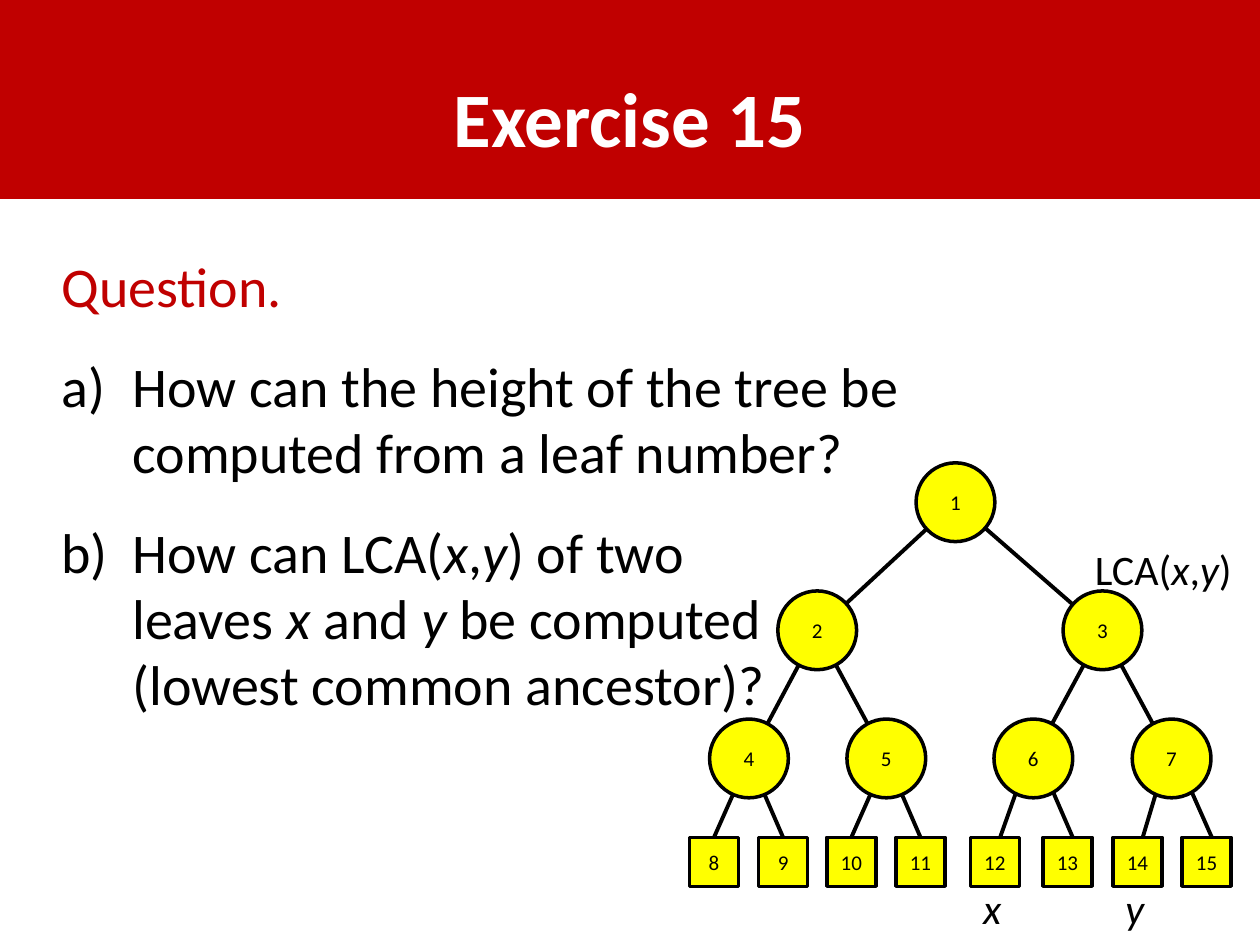
import pptx
import pptx.dml.color
import pptx.enum.shapes
import pptx.enum.text
import pptx.oxml
import pptx.oxml.ns
import pptx.util
from dataclasses import dataclass
from lxml import etree

Pt = pptx.util.Pt
SHAPE = pptx.enum.shapes.MSO_SHAPE
ALIGN = pptx.enum.text.PP_ALIGN
ANCHOR = pptx.enum.text.MSO_ANCHOR


@dataclass(frozen=True)
class Theme:
    font: str = "Calibri"
    red: str = "C00000"
    white: str = "FFFFFF"
    black: str = "000000"
    yellow: str = "FFFF00"
    title: int = 44
    body: int = 32
    label: int = 24
    node: int = 12


THEME = Theme()


def color(code):
    return pptx.dml.color.RGBColor.from_string(code)


def write(para, text, size=THEME.body, tint=THEME.black, bold=False,
          align=ALIGN.LEFT, after=0, spacing=None):
    """Write text into a paragraph; *stars* enclose italics, a newline breaks."""
    para.alignment = align
    para.space_after = Pt(after)
    if spacing:
        para.line_spacing = spacing
    for row, line in enumerate(text.split("\n")):
        if row:
            para.add_line_break()
        for index, part in enumerate(line.split("*")):
            if part:
                span = para.add_run()
                span.text = part
                span.font.name = THEME.font
                span.font.size = Pt(size)
                span.font.bold = bold
                span.font.italic = index % 2 == 1
                span.font.color.rgb = color(tint)


def add_box(shapes, left, top, width, height, anchor=ANCHOR.TOP):
    box = shapes.add_textbox(Pt(left), Pt(top), Pt(width), Pt(height))
    box.text_frame.word_wrap = True
    box.text_frame.vertical_anchor = anchor
    return box.text_frame


def add_filled(shapes, kind, left, top, width, height, fill, line):
    shape = shapes.add_shape(kind, Pt(left), Pt(top), Pt(width), Pt(height))
    shape.shadow.inherit = False
    shape.fill.solid()
    shape.fill.fore_color.rgb = color(fill)
    shape.line.color.rgb = color(line)
    shape.line.width = Pt(2)
    return shape


def add_header(page, left, top, width, height):
    add_filled(page.shapes, SHAPE.RECTANGLE, left, top, width, height,
               THEME.red, THEME.red)
    frame = add_box(page.shapes, left + 36, top + 21.6, width - 72, 90,
                    ANCHOR.MIDDLE)
    write(frame.paragraphs[0], "Exercise 15", size=THEME.title,
          tint=THEME.white, bold=True, align=ALIGN.CENTER)


def add_question(page, left, top, width, height):
    frame = add_box(page.shapes, left, top, width, height)
    layout = dict(after=19.5, spacing=0.98)
    write(frame.paragraphs[0], "Question.", tint=THEME.red, **layout)
    items = [
        "How can the height of the tree be computed from a leaf number?",
        "How can LCA(*x*,*y*) of two\nleaves *x* and *y* be computed\n"
        "(lowest common ancestor)?",
    ]
    for item in items:
        para = frame.add_paragraph()
        write(para, item, **layout)
        # Lettered list with a hanging indent
        properties = para._p.get_or_add_pPr()
        properties.set("marL", str(Pt(40.5)))
        properties.set("indent", str(-Pt(40.5)))
        bullet = etree.SubElement(properties, pptx.oxml.ns.qn("a:buAutoNum"))
        bullet.set("type", "alphaLcParenR")


def add_edge(shapes, start, end):
    edge = shapes.add_connector(pptx.enum.shapes.MSO_CONNECTOR.STRAIGHT,
                                Pt(start[0]), Pt(start[1]), Pt(end[0]), Pt(end[1]))
    edge.line.color.rgb = color(THEME.black)
    edge.line.width = Pt(2.25)
    etree.SubElement(edge._element.spPr, pptx.oxml.ns.qn("a:effectLst"))


def add_node(shapes, number, center, size, kind):
    node = add_filled(shapes, kind, center[0] - size / 2, center[1] - size / 2,
                      size, size, THEME.yellow, THEME.black)
    frame = node.text_frame
    frame.margin_left = frame.margin_right = 0
    frame.margin_top = frame.margin_bottom = 0
    frame.vertical_anchor = ANCHOR.MIDDLE
    write(frame.paragraphs[0], str(number), size=THEME.node, align=ALIGN.CENTER)


def add_tree(page, left, top):
    circle, square, step = 45, 28, 73.2
    first_leaf = 8
    # Horizontal centres of nodes 1 to 15, level by level
    columns = [152,
               73, 236,
               34, 112.5, 196.5, 275.5,
               14, 53.5, 92.5, 132, 174.5, 216, 256, 295.5]
    leaf_row = top + 228
    centers = {}
    for number, column in enumerate(columns, 1):
        level = number.bit_length() - 1
        row = leaf_row if number >= first_leaf else top + circle / 2 + level * step
        centers[number] = (left + column, row)

    group = page.shapes.add_group_shape().shapes
    # Edges: node n hangs below node n // 2
    for number in range(2, len(columns) + 1):
        start, end = centers[number // 2], centers[number]
        if number >= first_leaf:
            end = (end[0], end[1] - square / 2)
        if number >= 12:
            # Edges of the last four leaves are spread a little
            start = (start[0] + (3 if number % 2 else -3), start[1])
            end = (end[0] + 3, end[1])
        add_edge(group, start, end)
    for number, center in centers.items():
        if number < first_leaf:
            add_node(group, number, center, circle, SHAPE.OVAL)
        else:
            add_node(group, number, center, square, SHAPE.RECTANGLE)

    # Labels of the two leaves and their common ancestor
    for number, name in ((12, "*x*"), (14, "*y*")):
        frame = add_box(page.shapes, centers[number][0] - 21.5, leaf_row + 8.4, 40, 36)
        write(frame.paragraphs[0], name, size=THEME.label, align=ALIGN.CENTER)
    ancestor = centers[3]
    frame = add_box(page.shapes, ancestor[0] - 11.5, ancestor[1] - 53.3, 101.5, 36)
    write(frame.paragraphs[0], "LCA(*x*,*y*)", size=THEME.label)


def main():
    deck = pptx.Presentation()
    deck.slide_width, deck.slide_height = Pt(720), Pt(540)
    page = deck.slides.add_slide(deck.slide_layouts[6])
    add_header(page, 0, 0, 720, 112.5)
    add_question(page, 28, 142, 605, 311)
    add_tree(page, 394, 264.5)
    deck.save("out.pptx")


if __name__ == "__main__":
    main()
